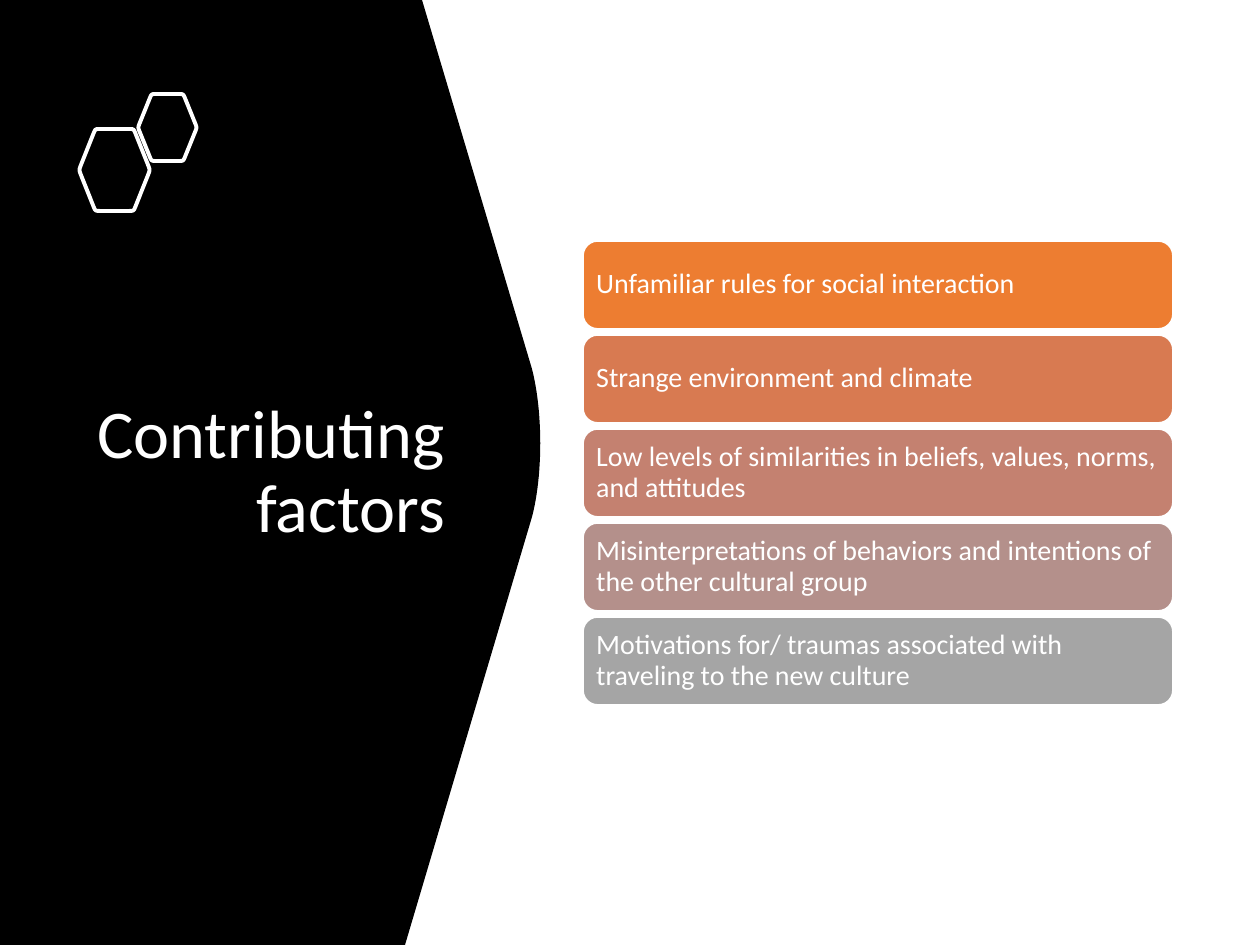
"""Build the slide on contributing factors."""
from dataclasses import dataclass
from math import dist

from pptx import Presentation
from pptx import util as u
from pptx.dml.color import RGBColor
from pptx.enum import shapes, text

PX = u.Inches(1) / 126
FONT = "Calibri"
HUES = {
    "ink": "000000",
    "white": "FFFFFF",
    "orange": "ED7D31",
    "rust": "D87A51",
    "clay": "C48170",
    "mauve": "B4908B",
    "gray": "A5A5A5",
}
Point = tuple[float, float]


@dataclass
class Box:
    left: int
    top: int
    width: int
    height: int


@dataclass
class Card:
    words: str
    hue: str


CARDS = [
    Card("Unfamiliar rules for social interaction", "orange"),
    Card("Strange environment and climate", "rust"),
    Card("Low levels of similarities in beliefs, values, norms, and attitudes", "clay"),
    Card("Misinterpretations of behaviors and intentions of the other cultural group", "mauve"),
    Card("Motivations for/ traumas associated with traveling to the new culture", "gray"),
]
HEXES = [Box(79, 129, 71, 82), Box(138, 94, 59, 67)]
FIRST = Box(583, 241, 590, 88)
PITCH = 94


def emu(px: float) -> int:
    return round(px * PX)


def place(box: Box) -> list[int]:
    return [emu(n) for n in (box.left, box.top, box.width, box.height)]


def color(hue: str) -> RGBColor:
    return RGBColor.from_string(HUES[hue])


def paint(shape, fill: str | None = None, line: str | None = None, width: float = 1) -> None:
    shape.shadow.inherit = False
    if fill:
        shape.fill.solid()
        shape.fill.fore_color.rgb = color(fill)
    else:
        shape.fill.background()
    if line:
        shape.line.color.rgb = color(line)
        shape.line.width = u.Pt(width)
    else:
        shape.line.fill.background()


def write(shape, words: str, *, size: int, align, side: int = 13, edge: int = 6) -> None:
    frame = shape.text_frame
    frame.word_wrap = True
    frame.vertical_anchor = text.MSO_ANCHOR.MIDDLE
    frame.margin_left = frame.margin_right = emu(side)
    frame.margin_top = frame.margin_bottom = emu(edge)
    para = frame.paragraphs[0]
    para.alignment = align
    para.line_spacing = 0.9
    run = para.add_run()
    run.text = words
    run.font.name = FONT
    run.font.size = u.Pt(size)
    run.font.color.rgb = color("white")


def curve(a: Point, b: Point, c: Point, d: Point, steps: int) -> list[Point]:
    spots = []
    for i in range(steps + 1):
        t = i / steps
        s = 1 - t
        parts = (s**3, 3 * s * s * t, 3 * s * t * t, t**3)
        spots.append(tuple(sum(k * n for k, n in zip(parts, axis)) for axis in zip(a, b, c, d)))
    return spots


def trim(tip: Point, goal: Point, gap: float) -> Point:
    part = gap / dist(tip, goal)
    return tuple(n + (m - n) * part for n, m in zip(tip, goal))


def outline(slide, spots: list[Point]):
    ends = [(emu(x), emu(y)) for x, y in spots]
    pen = slide.shapes.build_freeform(*ends[0], scale=1)
    pen.add_line_segments(ends[1:], close=True)
    return pen.convert_to_shape()


def panel(slide) -> None:
    nose = curve((532, 369), (543, 412), (543, 475), (532, 517), 24)
    paint(outline(slide, [(0, 0), (422, 0), *nose, (405, 945), (0, 945)]), fill="ink")


def hexagon(slide, box: Box) -> None:
    right, low = box.left + box.width, box.top + box.height
    mid, cut = box.top + box.height / 2, box.width * 0.23
    tips = [
        (box.left, mid), (box.left + cut, box.top), (right - cut, box.top),
        (right, mid), (right - cut, low), (box.left + cut, low),
    ]
    spots = []
    for i, tip in enumerate(tips):
        start = trim(tip, tips[i - 1], 5)
        end = trim(tip, tips[(i + 1) % len(tips)], 5)
        spots += curve(start, tip, tip, end, 6)
    paint(outline(slide, spots), line="white", width=2.25)


def title(slide) -> None:
    box = slide.shapes.add_textbox(*place(Box(79, 231, 379, 484)))
    write(box, "Contributing factors", size=39, align=text.PP_ALIGN.RIGHT)


def stack(slide) -> None:
    for i, card in enumerate(CARDS):
        box = Box(FIRST.left, FIRST.top + i * PITCH, FIRST.width, FIRST.height)
        shape = slide.shapes.add_shape(shapes.MSO_SHAPE.ROUNDED_RECTANGLE, *place(box))
        paint(shape, fill=card.hue, line="white")
        write(shape, card.words, size=16, align=text.PP_ALIGN.LEFT, side=9)


def main() -> None:
    deck = Presentation()
    deck.slide_width, deck.slide_height = u.Inches(10), u.Inches(7.5)
    slide = deck.slides.add_slide(deck.slide_layouts[6])
    panel(slide)
    title(slide)
    for box in HEXES:
        hexagon(slide, box)
    stack(slide)
    deck.save("out.pptx")


if __name__ == "__main__":
    main()
